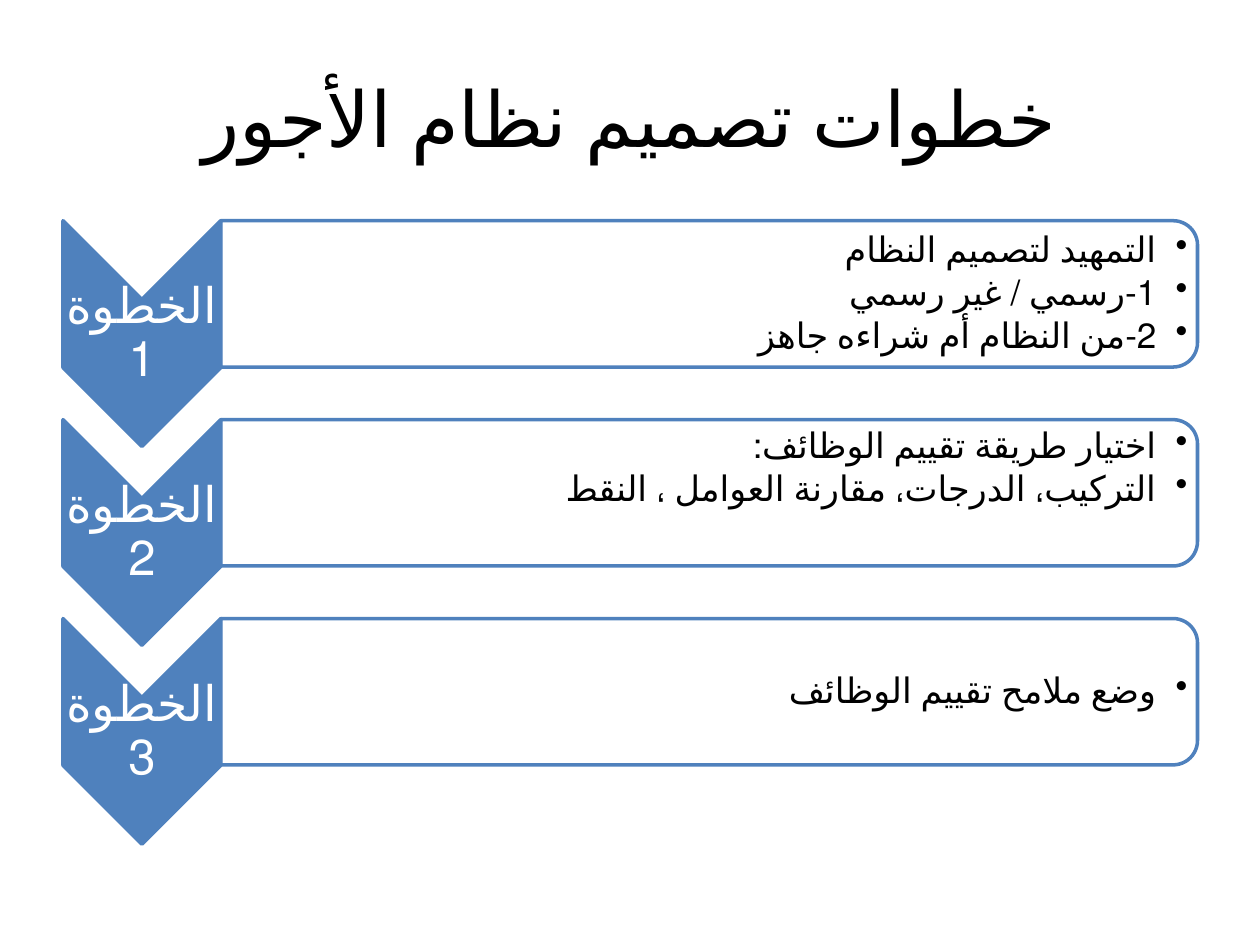
"""Build a slide showing the three steps of designing a wage system."""
from lxml.etree import SubElement
from pptx import Presentation
from pptx.dml.color import RGBColor
from pptx.enum.lang import MSO_LANGUAGE_ID as Language
from pptx.enum.shapes import MSO_SHAPE as Shape
from pptx.enum.text import MSO_ANCHOR as Anchor, PP_ALIGN as Align
from pptx.oxml.ns import qn
from pptx.util import Cm, Pt

COLORS = {"blue": "4F81BD", "white": "FFFFFF", "black": "000000"}
FONT = "Calibri"
STEPS = [
    ("الخطوة 1", Anchor.MIDDLE,
     ["التمهيد لتصميم النظام", "1-رسمي / غير رسمي", "2-من النظام أم شراءه جاهز"]),
    ("الخطوة 2", Anchor.TOP,
     ["اختيار طريقة تقييم الوظائف:", "التركيب، الدرجات، مقارنة العوامل ، النقط"]),
    ("الخطوة 3", Anchor.MIDDLE, ["وضع ملامح تقييم الوظائف"]),
]
FIRST_TOP, STEP_PITCH = 4.45, 4.01
LABEL_LEFT, LABEL_WIDTH = 1.27, 3.18
PANEL_LEFT = LABEL_LEFT + LABEL_WIDTH


def add_turned(page, kind, left, top, width, height, fill):
    """Add a shape turned by 90 degrees that covers the given area."""
    shift = (width - height) / 2
    shape = page.shapes.add_shape(
        kind, Cm(left + shift), Cm(top - shift), Cm(height), Cm(width))
    shape.rotation = 90
    shape.shadow.inherit = False
    shape.fill.solid()
    shape.fill.fore_color.rgb = RGBColor.from_string(COLORS[fill])
    shape.line.color.rgb = RGBColor.from_string(COLORS["blue"])
    shape.line.width = Pt(2)
    return shape


def write_lines(frame, lines, size, color, align, after=0, spacing=None):
    """Write right-to-left Arabic paragraphs in one style."""
    frame.text = "\n".join(lines)
    for para in frame.paragraphs:
        para.alignment = align
        para.line_spacing = spacing
        para.space_after = Pt(after)
        para.font.name = FONT
        para.font.size = Pt(size)
        para.font.color.rgb = RGBColor.from_string(COLORS[color])
        para._p.get_or_add_pPr().set("rtl", "1")
        for span in para.runs:
            span.font.language_id = Language.ARABIC_EGYPT


deck = Presentation()
deck.slide_width, deck.slide_height = Cm(25.4), Cm(19.05)
page = deck.slides.add_slide(deck.slide_layouts[5])

title = page.shapes.title
title.left, title.top, title.width, title.height = Cm(1.27), Cm(0.76), Cm(22.86), Cm(3.18)
title.text_frame.vertical_anchor = Anchor.MIDDLE
write_lines(title.text_frame, ["خطوات تصميم نظام الأجور"], 44, "black", Align.CENTER)

for index, (name, anchor, items) in enumerate(STEPS):
    top = FIRST_TOP + index * STEP_PITCH

    add_turned(page, Shape.CHEVRON, LABEL_LEFT, top, LABEL_WIDTH, 4.55, "blue")
    label = page.shapes.add_textbox(
        Cm(LABEL_LEFT), Cm(top + 1.6), Cm(LABEL_WIDTH), Cm(1.37)).text_frame
    label.word_wrap = True
    label.vertical_anchor = Anchor.MIDDLE
    label.margin_left = label.margin_right = Cm(0.05)
    label.margin_top = label.margin_bottom = Cm(0.05)
    write_lines(label, [name], 28, "white", Align.CENTER, after=9.8, spacing=0.9)

    panel = add_turned(
        page, Shape.ROUND_2_SAME_RECTANGLE, PANEL_LEFT, top, 19.69, 2.95, "white")
    fill_color = panel._element.spPr.find(qn("a:solidFill"))[0]
    SubElement(fill_color, qn("a:alpha"), val="90000")

    details = page.shapes.add_textbox(
        Cm(PANEL_LEFT), Cm(top + 0.15), Cm(19.53), Cm(2.67)).text_frame
    details.word_wrap = True
    details.vertical_anchor = anchor
    details.margin_left = Cm(0.41)
    details.margin_right = details.margin_top = details.margin_bottom = Cm(0.03)
    write_lines(details, items, 20, "black", Align.RIGHT, after=3, spacing=0.9)
    for para in details.paragraphs:
        para.level = 1
        properties = para._p.get_or_add_pPr()
        properties.set("marL", str(Cm(0.64)))
        properties.set("indent", str(-Cm(0.64)))
        bullet = properties.makeelement(qn("a:buChar"), {"char": "•"})
        properties.find(qn("a:defRPr")).addprevious(bullet)

deck.save("out.pptx")
